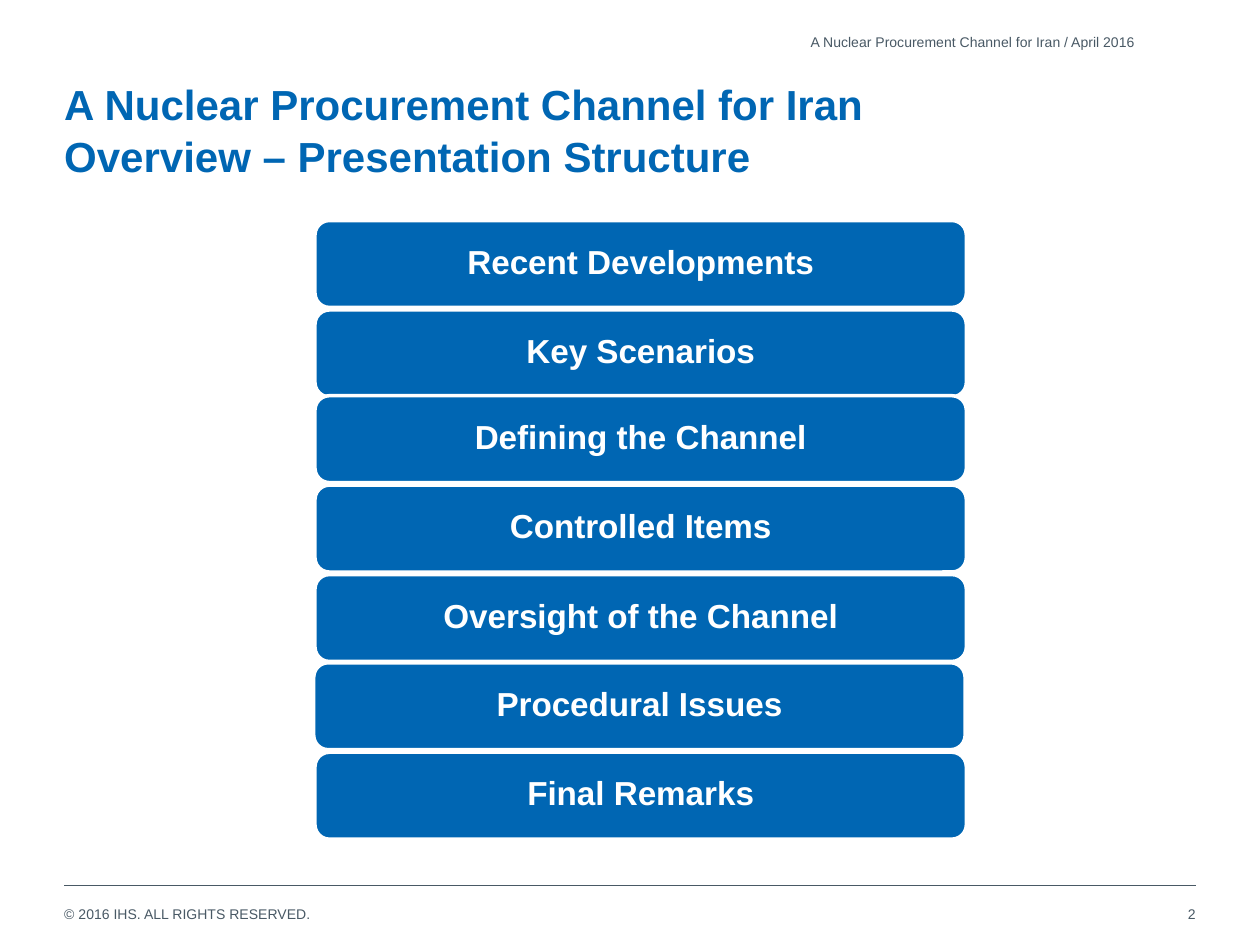
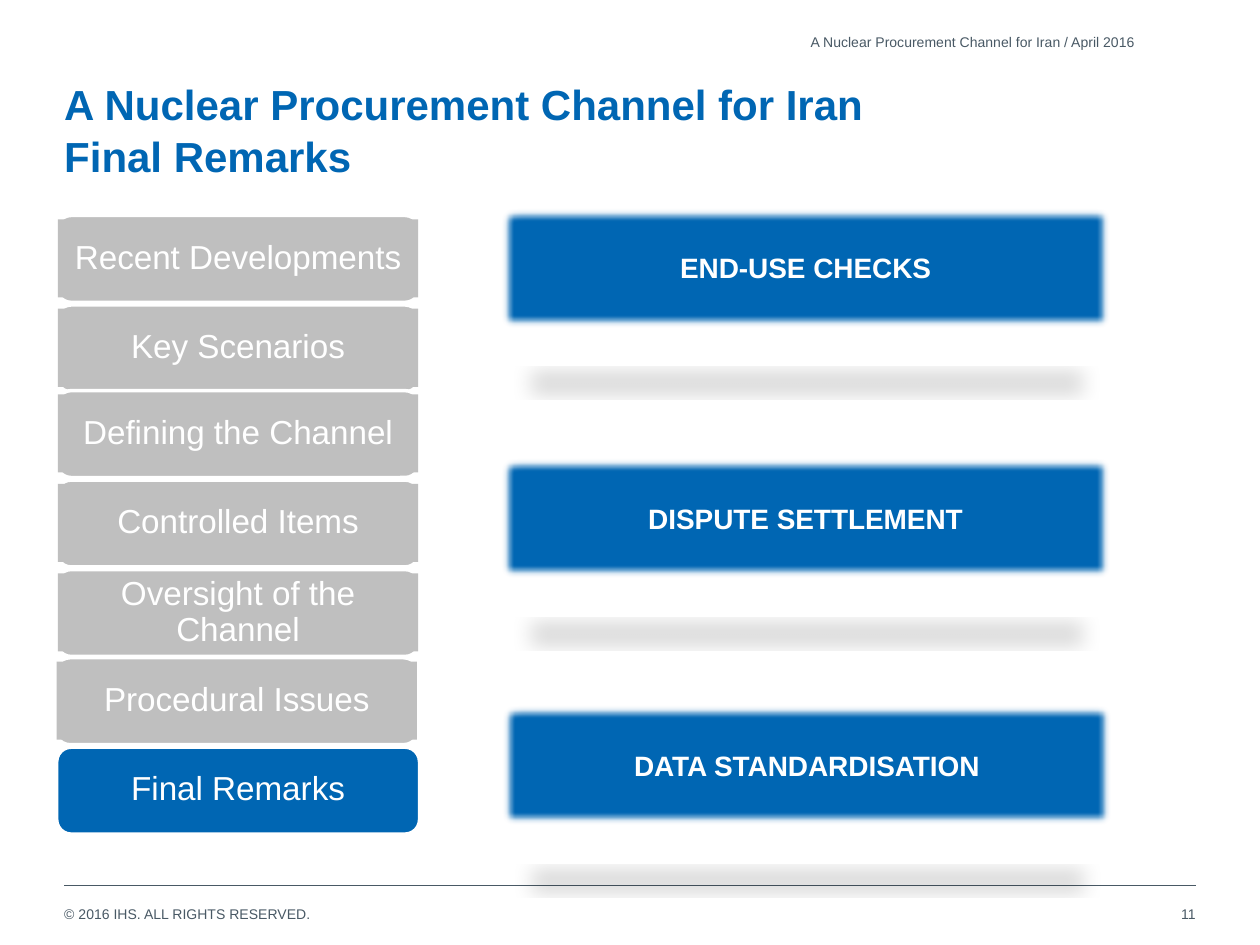
import pptx
import pptx.dml.color
import pptx.enum.shapes
import pptx.enum.text
import pptx.oxml
import pptx.oxml.ns
import pptx.util

PX = 9144
COLORS = {"blue": "0066B3", "slate": "495965", "grey": "BFBFBF", "white": "FFFFFF"}
SHAPE = pptx.enum.shapes.MSO_SHAPE
ALIGN = pptx.enum.text.PP_ALIGN
ANCHOR = pptx.enum.text.MSO_ANCHOR

SMALL = {"size": 8, "color": "slate"}
HEADING = {"size": 24, "color": "blue", "bold": True}
STEP = {"size": 19, "color": "white"}
CARD = {"size": 16, "color": "white", "bold": True}

TOPIC = "A Nuclear Procurement Channel for Iran"
STEPS = [
    ("Recent Developments", 175, 0),
    ("Key Scenarios", 246, 0),
    ("Defining the Channel", 314, 0),
    ("Controlled Items", 385, 0),
    ("Oversight of the Channel", 456, 0),
    ("Procedural Issues", 526, -1),
    ("Final Remarks", 597, 0),
]
CARDS = [("END-USE CHECKS", 398, 165), ("DISPUTE SETTLEMENT", 398, 364), ("DATA STANDARDISATION", 399, 560)]
CARD_EFFECTS = (
    f'<a:effectLst {pptx.oxml.ns.nsdecls("a")}>'
    '<a:outerShdw blurRad="152400" dist="317500" dir="5400000" sx="90000" sy="-19000" rotWithShape="0">'
    '<a:srgbClr val="000000"><a:alpha val="15000"/></a:srgbClr></a:outerShdw>'
    '<a:softEdge rad="63500"/></a:effectLst>'
)


def rgb(name):
    """Return the named colour."""
    return pptx.dml.color.RGBColor.from_string(COLORS[name])


class Deck:
    """Hold the presentation, its style and the current slide."""

    def __init__(self):
        self.prs = pptx.Presentation()
        self.prs.slide_width, self.prs.slide_height = 1000 * PX, 750 * PX
        self.s = None

    def label(self, sp, text, style, align=ALIGN.LEFT, anchor=ANCHOR.TOP, inset=(0, 0), spacing=None):
        """Put one styled paragraph into a shape."""
        tf = sp.text_frame
        x, y = (n * PX for n in inset)
        frame = {"word_wrap": True, "vertical_anchor": anchor, "margin_left": x,
                 "margin_right": x, "margin_top": y, "margin_bottom": y}
        for name, value in frame.items():
            setattr(tf, name, value)
        p = tf.paragraphs[0]
        p.text = text
        p.alignment = align
        p.line_spacing = spacing
        font = {"name": "Arial", "size": pptx.util.Pt(style["size"]), "bold": style.get("bold", False)}
        for r in p.runs:
            for name, value in font.items():
                setattr(r.font, name, value)
            r.font.color.rgb = rgb(style["color"])

    def text(self, box, text, style, **layout):
        """Add a text box."""
        sp = self.s.shapes.add_textbox(*(n * PX for n in box))
        self.label(sp, text, style, **layout)

    def shape(self, shapes, kind, box, fill, line=None):
        """Add a filled shape to a slide or a group."""
        sp = shapes.add_shape(kind, *(n * PX for n in box))
        sp.shadow.inherit = False
        sp.fill.solid()
        sp.fill.fore_color.rgb = rgb(fill)
        if line:
            sp.line.color.rgb = rgb(line)
            sp.line.width = pptx.util.Pt(2)
        else:
            sp.line.fill.background()
        return sp

    def rule(self, left, right, y):
        """Add a thin horizontal line."""
        c = self.s.shapes.add_connector(
            pptx.enum.shapes.MSO_CONNECTOR.STRAIGHT, left * PX, y * PX, right * PX, y * PX)
        c.line.color.rgb = rgb("slate")
        c.line.width = pptx.util.Pt(0.5)
        c._element.spPr.append(pptx.oxml.parse_xml(f'<a:effectLst {pptx.oxml.ns.nsdecls("a")}/>'))

    def slide(self, subtitle, number):
        """Start a slide with title, header and footer."""
        self.s = self.prs.slides.add_slide(self.prs.slide_layouts[6])
        right = {"align": ALIGN.RIGHT, "anchor": ANCHOR.MIDDLE}
        self.text((51, 719, 685, 13), "© 2016 IHS. ALL RIGHTS RESERVED.", SMALL)
        self.rule(51, 949, 703)
        self.text((51, 60, 898, 87), f"{TOPIC}\v{subtitle}", HEADING, spacing=1.05)
        self.text((723, 705, 226, 40), number, SMALL, **right)
        self.text((51, 21, 850, 24), f"{TOPIC} / April 2016", SMALL, **right)

    def step(self, box, text, fill, bold, plate):
        """Add a rounded step with its label, on a square plate if asked."""
        x, y, w, h = box
        g = self.s.shapes.add_group_shape()
        self.shape(g.shapes, SHAPE.ROUNDED_RECTANGLE, box, fill, "white")
        inner = (x + 1, y + 3, w - 2, h - 7)
        if plate:
            sp = self.shape(g.shapes, SHAPE.RECTANGLE, inner, fill)
        else:
            sp = g.shapes.add_textbox(*(n * PX for n in inner))
        self.label(sp, text, {**STEP, "bold": bold}, align=ALIGN.CENTER,
                   anchor=ANCHOR.MIDDLE, inset=(8, 4), spacing=0.9)

    def steps(self, left, width, shift, bold, current=None):
        """Add the column of steps, greying all but the current one."""
        for text, top, nudge in STEPS:
            grey = current is not None and text != current
            self.step((left + nudge, top + shift, width, 69), text,
                      "grey" if grey else "blue", bold, grey)

    def card(self, text, left, top):
        """Add a soft-edged card with a shadow beneath it."""
        sp = self.shape(self.s.shapes, SHAPE.RECTANGLE, (left, top, 483, 95), "blue", "blue")
        spPr = sp._element.spPr
        spPr.remove(spPr.find(pptx.oxml.ns.qn("a:effectLst")))
        spPr.append(pptx.oxml.parse_xml(CARD_EFFECTS))
        self.label(sp, text, CARD, align=ALIGN.CENTER, anchor=ANCHOR.MIDDLE, inset=(8, 5))


def main():
    """Build both slides and save them."""
    deck = Deck()
    deck.slide("Overview – Presentation Structure", "2")
    deck.steps(250, 517, 0, True)
    deck.slide("Final Remarks", "11")
    for card in CARDS:
        deck.card(*card)
    deck.steps(45, 288, -4, False, "Final Remarks")
    deck.prs.save("out.pptx")


if __name__ == "__main__":
    main()
